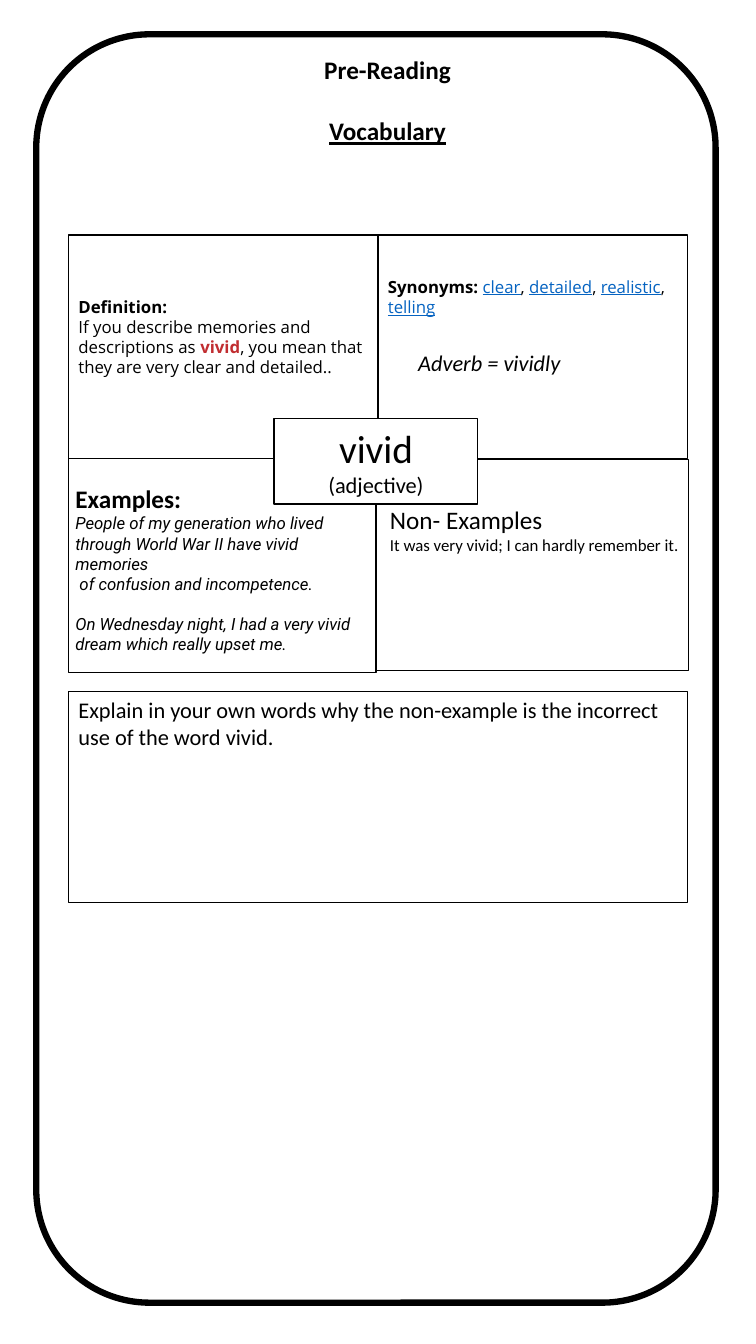
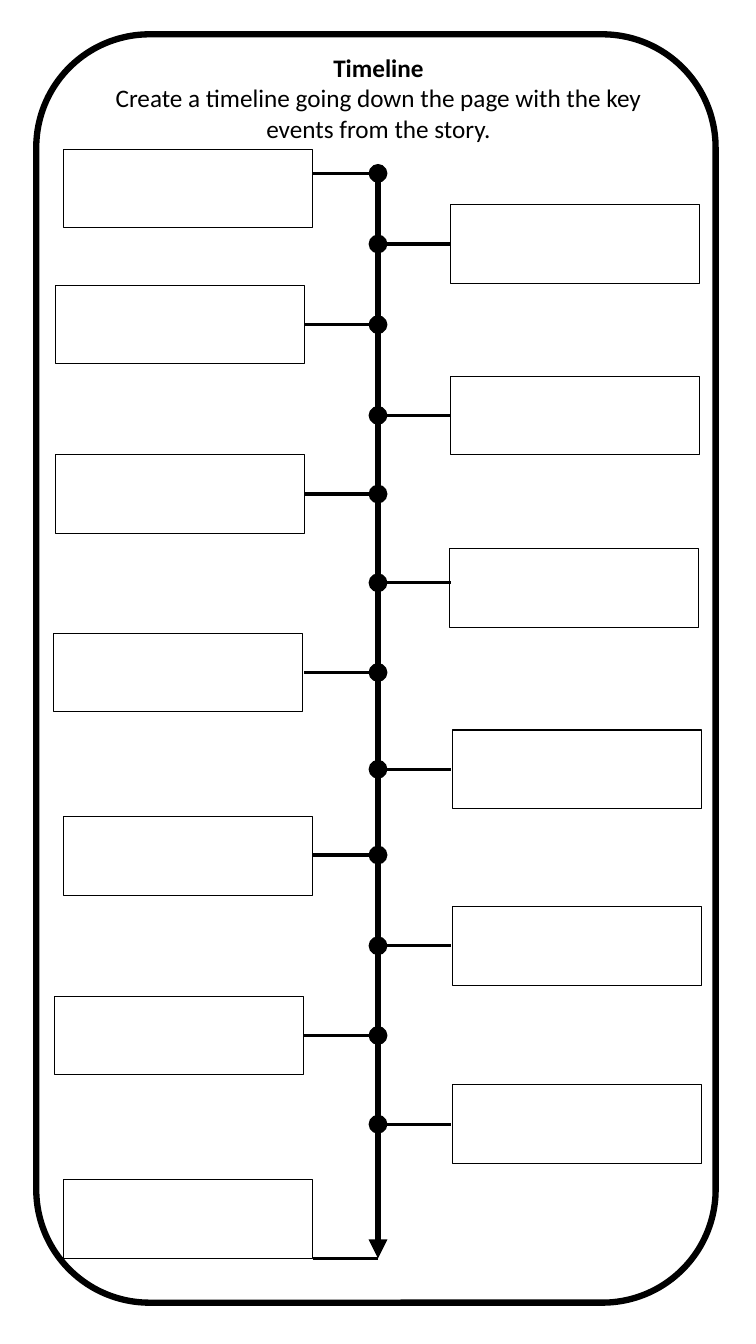
from collections import namedtuple

from lxml import etree
from pptx import Presentation
from pptx.dml.color import RGBColor
from pptx.enum.shapes import MSO_CONNECTOR, MSO_SHAPE
from pptx.enum.text import MSO_ANCHOR, PP_ALIGN
from pptx.oxml.ns import qn
from pptx.util import Inches, Pt

RECTANGLE = MSO_SHAPE.RECTANGLE
ROUNDED = MSO_SHAPE.FLOWCHART_ALTERNATE_PROCESS
STRAIGHT = MSO_CONNECTOR.STRAIGHT
TOP, MIDDLE = MSO_ANCHOR.TOP, MSO_ANCHOR.MIDDLE
LEFT, CENTER = PP_ALIGN.LEFT, PP_ALIGN.CENTER

COLOURS = {"ink": "000000", "paper": "FFFFFF", "keyword": "C12D30", "link": "0563C1"}
BODY, DICTIONARY, EXAMPLE = "Calibri", "Open Sans", "Roboto"

Box = namedtuple("Box", "left top width height")
FRAME = Box(0.36, 0.34, 6.74, 12.58)
VOCABULARY = Box(0.68, 2.33, 6.14, 6.62)
TIMELINE = Box(0.53, 1.48, 6.44, 11)

# Event: marker height, left end of its branch, left and top of its box
EVENTS = [
    (1.72, 3.11, 0.63, 1.48),
    (2.42, 3.83, 4.47, 2.03),
    (3.22, 3.02, 0.55, 2.83),
    (4.12, 3.83, 4.47, 3.73),
    (4.9, 3.02, 0.55, 4.51),
    (5.78, 3.83, 4.46, 5.44),
    (6.67, 3.02, 0.53, 6.28),
    (7.63, 3.83, 4.49, 7.24),
    (8.48, 3.11, 0.63, 8.1),
    (9.38, 3.83, 4.49, 8.99),
    (10.27, 3.02, 0.54, 9.88),
    (11.15, 3.83, 4.49, 10.76),
    (12.48, 3.11, 0.63, 11.7),
]


def rgb(name):
    return RGBColor.from_string(COLOURS[name])


def inside(box, left, top, width, height):
    """Return a box whose corner is measured from the corner of another."""
    return Box(box.left + left, box.top + top, width, height)


def span(text, size=12, font=BODY, colour="ink", **style):
    """Describe a run; style holds bold, italic or underline."""
    return text, size, font, colour, style


def para(*spans, align=LEFT, after=0):
    return spans, align, after


def write(shape, paras, anchor=TOP, bottom=0.05):
    frame = shape.text_frame
    frame.word_wrap = True
    frame.vertical_anchor = anchor
    frame.margin_bottom = Inches(bottom)
    for index, (spans, align, after) in enumerate(paras):
        paragraph = frame.add_paragraph() if index else frame.paragraphs[0]
        paragraph.alignment = align
        paragraph.space_after = Pt(after)
        for text, size, font, colour, style in spans:
            run = paragraph.add_run()
            run.text = text
            run.font.size = Pt(size)
            run.font.name = font
            run.font.color.rgb = rgb(colour)
            for name, value in style.items():
                setattr(run.font, name, value)


def add_text(page, box, *paras):
    write(page.shapes.add_textbox(*map(Inches, box)), paras)


def add_panel(page, box, *paras, kind=RECTANGLE, fill=None, weight=1, **layout):
    shape = page.shapes.add_shape(kind, *map(Inches, box))
    shape.shadow.inherit = False
    if fill:
        shape.fill.solid()
        shape.fill.fore_color.rgb = rgb(fill)
    else:
        shape.fill.background()
    shape.line.color.rgb = rgb("ink")
    shape.line.width = Pt(weight)
    if paras:
        write(shape, paras, **layout)


def add_line(page, start, end, weight, head=None, tail=None):
    line = page.shapes.add_connector(STRAIGHT, *map(Inches, start + end))
    line.line.color.rgb = rgb("ink")
    line.line.width = Pt(weight)
    outline = line.line._get_or_add_ln()
    for tag, kind in (("a:headEnd", head), ("a:tailEnd", tail)):
        if kind:
            etree.SubElement(outline, qn(tag)).set("type", kind)
    etree.SubElement(line._element.spPr, qn("a:effectLst"))


def add_page(deck):
    page = deck.slides.add_slide(deck.slide_layouts[6])
    add_panel(page, FRAME, kind=ROUNDED, weight=4.5)
    return page


def definition():
    base = {"font": DICTIONARY}
    return [
        para(span("Definition:", bold=True, **base)),
        para(
            span("If you describe memories and descriptions as ", **base),
            span("vivid", colour="keyword", bold=True, **base),
            span(", you mean that they are very clear and detailed..", **base),
        ),
    ]


def synonyms(words):
    spans = [span("Synonyms: ", font=DICTIONARY, bold=True)]
    for index, word in enumerate(words):
        if index:
            spans.append(span(", ", font=DICTIONARY))
        spans.append(span(word, font=DICTIONARY, colour="link", underline=True))
    return para(*spans)


def add_word_map(page, box):
    """Four panels around the word, with a question below."""
    half = box.width / 2
    add_panel(page, inside(box, 0, 0, half, 2.22), *definition(),
              fill="paper", anchor=MIDDLE, bottom=0.25)
    add_panel(page, inside(box, half, 0, half, 2.22),
              synonyms(["clear", "detailed", "realistic", "telling"]),
              fill="paper", anchor=MIDDLE, bottom=1.05)
    add_panel(page, inside(box, 0, 2.22, 3.05, 2.12), fill="paper")
    add_panel(page, inside(box, 3.05, 2.23, 3.1, 2.09), fill="paper")
    add_panel(page, inside(box, 2.04, 1.82, 2.02, 0.85),
              para(span("vivid", 28), align=CENTER),
              para(span("(adjective)", 16), align=CENTER),
              fill="paper", anchor=MIDDLE)

    quote = {"font": EXAMPLE, "italic": True}
    add_text(
        page, inside(box, -0.03, 2.41, 3.1, 2.22),
        para(span("Examples:", 18, bold=True)),
        para(span("People of my generation who lived through World War II "
                  "have vivid memories", **quote)),
        para(span(" of confusion and incompetence.", **quote), after=14),
        para(span("On Wednesday night, I had a very vivid dream which really "
                  "upset me.", **quote)),
    )
    add_text(
        page, inside(box, 3.09, 2.62, 3.1, 0.81),
        para(span("Non- Examples", 18)),
        para(span("It was very vivid; I can hardly remember it.")),
    )
    add_panel(page, inside(box, 0, 4.53, box.width, 2.09),
              para(span("Explain in your own words why the non-example is the "
                        "incorrect use of the word vivid.", 16)),
              fill="paper")
    add_text(page, inside(box, 3.37, 1.08, 2.12, 0.37),
             para(span("Adverb = vividly", 16, italic=True)))


def add_timeline(page, box):
    """A downward arrow with event boxes branching off on either side."""
    axis = box.left + box.width / 2
    end = box.top + box.height
    markers = [event[0] for event in EVENTS[:-1]]
    add_line(page, (axis, markers[0]), (axis, end), 4.5, "oval", "triangle")
    for marker in markers[1:]:
        add_line(page, (axis, marker), (axis, marker + 0.7), 4.5, "oval")
    for marker, branch, left, top in EVENTS:
        add_line(page, (branch + 0.64, marker), (branch, marker), 2.25)
        add_panel(page, Box(left, top, 2.47, 0.78), weight=0.75)


def build_vocabulary(deck):
    page = add_page(deck)
    add_text(
        page, Box(0.68, 0.49, 6.33, 2.22),
        para(span("Pre-Reading", 18, bold=True), align=CENTER, after=22),
        para(span("Vocabulary", 18, bold=True, underline=True), align=CENTER),
    )
    add_word_map(page, VOCABULARY)


def build_timeline(deck):
    page = add_page(deck)
    add_text(
        page, Box(0.81, 0.47, 5.89, 1.01),
        para(span("Timeline", 18, bold=True), align=CENTER),
        para(span("Create a timeline going down the page with the key events "
                  "from the story.", 18), align=CENTER),
    )
    add_timeline(page, TIMELINE)


def main():
    deck = Presentation()
    deck.slide_width, deck.slide_height = Inches(7.5), Inches(13.33)
    build_vocabulary(deck)
    build_timeline(deck)
    deck.save("out.pptx")


if __name__ == "__main__":
    main()
